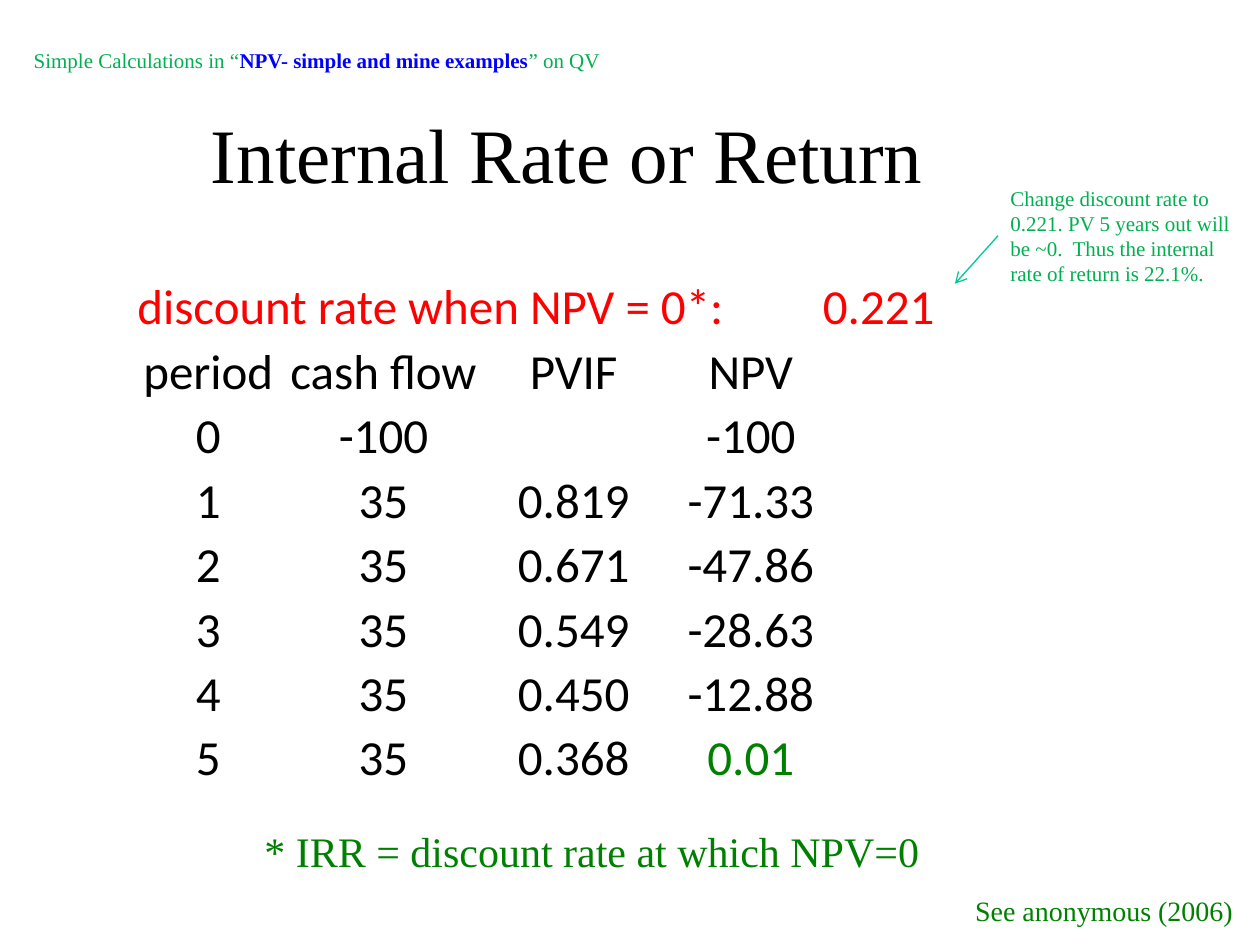
"""Build a slide that shows the internal rate of return as a worked table."""
from dataclasses import dataclass

from lxml import etree
from pptx import Presentation
from pptx import util as u
from pptx.dml.color import RGBColor
from pptx.enum import shapes, text
from pptx.oxml.ns import qn


@dataclass(frozen=True)
class Theme:
    serif: str = "Times New Roman"
    sans: str = "Calibri"
    black: str = "000000"
    red: str = "FF0000"
    green: str = "008000"
    note_green: str = "00B050"
    blue: str = "0000FF"
    teal: str = "00C896"
    title: int = 44
    table: int = 28
    footnote: int = 24
    source: int = 16
    note: int = 12


THEME = Theme()
COLUMN_WIDTHS = (2.92, 4.14, 3.53, 3.61, 2.92)
ROW_HEIGHT = 1.3
RATE_TAB = 13.82
ROWS = (
    ("discount rate when NPV = 0*:\t0.221",),
    ("period", "cash flow", "PVIF", "NPV"),
    ("0", "-100", "", "-100"),
    ("1", "35", "0.819", "-71.33"),
    ("2", "35", "0.671", "-47.86"),
    ("3", "35", "0.549", "-28.63"),
    ("4", "35", "0.450", "-12.88"),
    ("5", "35", "0.368", "0.01"),
)


def add_span(para, words, size, color, face=THEME.serif, bold=False):
    span = para.add_run()
    span.text = words
    span.font.name = face
    span.font.size = u.Pt(size)
    span.font.bold = bold
    span.font.color.rgb = RGBColor.from_string(color)


def add_title(page, words):
    title = page.shapes.title
    title.left, title.top = u.Cm(0.64), u.Cm(1.48)
    title.width, title.height = u.Cm(21.59), u.Cm(3.18)
    frame = title.text_frame
    frame.vertical_anchor = text.MSO_ANCHOR.MIDDLE
    para = frame.paragraphs[0]
    para.alignment = text.PP_ALIGN.CENTER
    add_span(para, words, THEME.title, THEME.black)


def add_text(page, place, spans, size, wrap=False):
    box = page.shapes.add_textbox(*(u.Cm(length) for length in place))
    frame = box.text_frame
    frame.word_wrap = wrap
    frame.auto_size = text.MSO_AUTO_SIZE.SHAPE_TO_FIT_TEXT
    for words, color, bold in spans:
        add_span(frame.paragraphs[0], words, size, color, bold=bold)


def fill_cell(cell, words, color, alignment):
    cell.vertical_anchor = text.MSO_ANCHOR.BOTTOM
    cell.margin_left = cell.margin_right = cell.margin_top = u.Cm(0.03)
    cell.margin_bottom = 0
    para = cell.text_frame.paragraphs[0]
    para.alignment = alignment
    if words:
        add_span(para, words, THEME.table, color, THEME.sans)


def add_tab_stop(para, position):
    stops = etree.SubElement(para._p.get_or_add_pPr(), qn("a:tabLst"))
    etree.SubElement(stops, qn("a:tab"), pos=str(u.Cm(position)), algn="l")


def add_cash_table(page):
    frame = page.shapes.add_table(
        len(ROWS), len(COLUMN_WIDTHS), u.Cm(2.74), u.Cm(5.51),
        u.Cm(sum(COLUMN_WIDTHS)), u.Cm(ROW_HEIGHT * len(ROWS)))
    table = frame.table
    table.first_row = table.horz_banding = False
    for column, width in zip(table.columns, COLUMN_WIDTHS):
        column.width = u.Cm(width)
    for row in table.rows:
        row.height = u.Cm(ROW_HEIGHT)
    for cell in table.iter_cells():
        cell.fill.background()

    heading = table.cell(0, 0)
    heading.merge(table.cell(0, len(COLUMN_WIDTHS) - 1))
    fill_cell(heading, ROWS[0][0], THEME.red, text.PP_ALIGN.LEFT)
    add_tab_stop(heading.text_frame.paragraphs[0], RATE_TAB)
    for row, values in enumerate(ROWS[1:], 1):
        for column, words in enumerate(values):
            final_value = row == len(ROWS) - 1 and column == len(values) - 1
            color = THEME.green if final_value else THEME.black
            fill_cell(table.cell(row, column), words, color, text.PP_ALIGN.CENTER)


def add_arrow(page, start, end):
    points = (u.Cm(length) for length in (*start, *end))
    arrow = page.shapes.add_connector(shapes.MSO_CONNECTOR.STRAIGHT, *points)
    arrow.line.color.rgb = RGBColor.from_string(THEME.teal)
    arrow.line.width = u.Pt(0.75)
    etree.SubElement(arrow.line._get_or_add_ln(), qn("a:tailEnd"), type="arrow")
    etree.SubElement(arrow._element.spPr, qn("a:effectLst"))


def main():
    deck = Presentation()
    deck.slide_width, deck.slide_height = u.Cm(25.4), u.Cm(19.05)
    page = deck.slides.add_slide(deck.slide_layouts.get_by_name("Title Only"))
    add_title(page, "Internal Rate or Return")
    add_cash_table(page)
    add_text(page, (5.08, 16.51, 13.72, 1.27),
             [("* IRR = discount rate at which NPV=0", THEME.green, False)],
             THEME.footnote)
    add_text(page, (19.41, 17.88, 5.77, 0.94),
             [("See anonymous (2006)", THEME.green, False)], THEME.source)
    add_text(page, (20.12, 3.61, 5.28, 2.31),
             [("Change discount rate to 0.221. PV 5 years out will be ~0.  "
               "Thus the internal rate of return is 22.1%.",
               THEME.note_green, False)], THEME.note, wrap=True)
    add_arrow(page, (20.12, 4.75), (19.25, 5.72))
    add_text(page, (0.43, 0.84, 12.01, 0.76),
             [("Simple Calculations in “", THEME.note_green, False),
              ("NPV- simple and mine examples", THEME.blue, True),
              ("” on QV", THEME.note_green, False)], THEME.note)
    deck.save("out.pptx")


if __name__ == "__main__":
    main()
